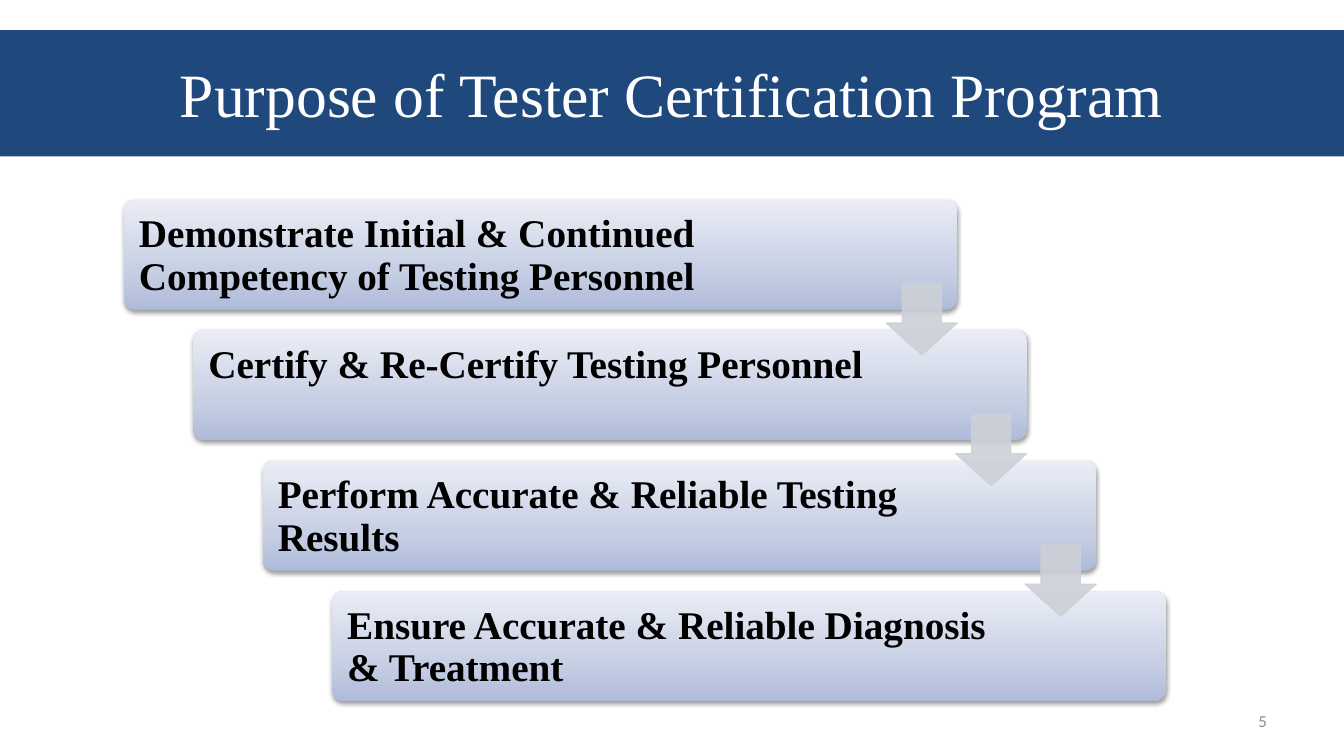
import copy

import pptx
import pptx.util
import pptx.dml.color
import pptx.enum.shapes
import pptx.enum.text
import pptx.oxml
import pptx.oxml.ns

Cm = pptx.util.Cm
Pt = pptx.util.Pt
Kind = pptx.enum.shapes.MSO_SHAPE
Align = pptx.enum.text.PP_ALIGN
Anchor = pptx.enum.text.MSO_ANCHOR
qn = pptx.oxml.ns.qn

SERIF = "Times New Roman"
STEPS = [
    "Demonstrate Initial & Continued Competency of Testing Personnel",
    "Certify & Re-Certify Testing Personnel",
    "Perform Accurate & Reliable Testing Results",
    "Ensure Accurate & Reliable Diagnosis & Treatment",
]
STOPS = [(0, "AFBBDA"), (0.35, "C7CFE4"), (1, "EAEDF5")]

# Staircase measures, in centimetres
LEFT, TOP = 3.12, 5.03
WIDE, HIGH = 21.01, 2.77
STEP_X, STEP_Y = 1.75, 3.29
ARROW = 1.8
ARROW_TOP = 2.12


def rgb(code):
    return pptx.dml.color.RGBColor.from_string(code)


def place(shape, left, top, width, height):
    shape.left, shape.top = Cm(left), Cm(top)
    shape.width, shape.height = Cm(width), Cm(height)


def write(shape, text, size, font, color, align, bold=False):
    frame = shape.text_frame
    frame.text = text
    frame.word_wrap = True
    para = frame.paragraphs[0]
    para.alignment = align
    face = para.runs[0].font
    face.name, face.size, face.bold = font, Pt(size), bold
    face.color.rgb = rgb(color)
    return frame


def make(tag, **attrs):
    node = pptx.oxml.parse_xml(f"<a:{tag} {pptx.oxml.ns.nsdecls('a')}/>")
    for name, value in attrs.items():
        node.set(name, str(value))
    return node


def shade(shape):
    """Fill with the three-stop gradient, light at the top."""
    fill = shape.fill
    fill.gradient()
    fill.gradient_angle = 90
    first = shape.element.spPr.find(".//" + qn("a:gs"))
    first.addnext(copy.deepcopy(first))
    for stop, (spot, code) in zip(fill.gradient_stops, STOPS):
        stop.position = spot
        stop.color.rgb = rgb(code)


def cast(shape):
    """Give a soft shadow straight below."""
    shape.shadow.inherit = False
    shadow = make("outerShdw", blurRad=Pt(3.1), dist=Pt(1.6),
                  dir=5400000, rotWithShape=0)
    color = make("srgbClr", val="000000")
    color.append(make("alpha", val=38000))
    shadow.append(color)
    shape.element.spPr.find(qn("a:effectLst")).append(shadow)


def add_title(slide, text):
    title = slide.shapes.title
    place(title, 0, 0.76, 33.87, 3.18)
    title.fill.solid()
    title.fill.fore_color.rgb = rgb("1F497D")
    frame = write(title, text, 44, SERIF, "FFFFFF", Align.CENTER)
    frame.vertical_anchor = Anchor.MIDDLE


def add_step(slide, text, left, top):
    box = slide.shapes.add_shape(Kind.ROUNDED_RECTANGLE, Cm(left), Cm(top),
                                 Cm(WIDE), Cm(HIGH))
    box.adjustments[0] = 0.1
    shade(box)
    cast(box)
    box.line.fill.background()
    frame = write(box, text, 28, SERIF, "000000", Align.LEFT, True)
    frame.vertical_anchor = Anchor.TOP
    frame.margin_left = Cm(0.3)
    frame.margin_right = Cm(3.86)
    frame.margin_top = frame.margin_bottom = Cm(0.28)
    frame.paragraphs[0].line_spacing = 0.9


def add_arrow(slide, left, top):
    arrow = slide.shapes.add_shape(Kind.DOWN_ARROW, Cm(left), Cm(top),
                                   Cm(ARROW), Cm(ARROW))
    arrow.adjustments[0] = 0.55
    arrow.adjustments[1] = 0.45
    arrow.shadow.inherit = False
    arrow.line.width = Pt(0.75)
    for fill in (arrow.fill, arrow.line.fill):
        fill.solid()
        fill.fore_color.rgb = rgb("CDD0D7")
    for color in arrow.element.spPr.iter(qn("a:srgbClr")):
        color.append(make("alpha", val=90000))


def add_number(slide, text):
    box = slide.shapes.add_textbox(Cm(24.28), Cm(17.65), Cm(7.9), Cm(1.02))
    frame = write(box, text, 12, "Calibri", "8C8C8C", Align.RIGHT)
    frame.vertical_anchor = Anchor.MIDDLE


def main():
    deck = pptx.Presentation()
    deck.slide_width, deck.slide_height = Cm(33.87), Cm(19.05)
    slide = deck.slides.add_slide(deck.slide_layouts[5])

    # Title band and page number
    add_title(slide, "Purpose of Tester Certification Program")
    add_number(slide, "5")

    # Descending steps
    spots = [(LEFT + i * STEP_X, TOP + i * STEP_Y) for i in range(len(STEPS))]
    for text, (left, top) in zip(STEPS, spots):
        add_step(slide, text, left, top)

    # Arrows from each step to the next
    for left, top in spots[:-1]:
        add_arrow(slide, left + WIDE - ARROW, top + ARROW_TOP)

    deck.save("out.pptx")


if __name__ == "__main__":
    main()
